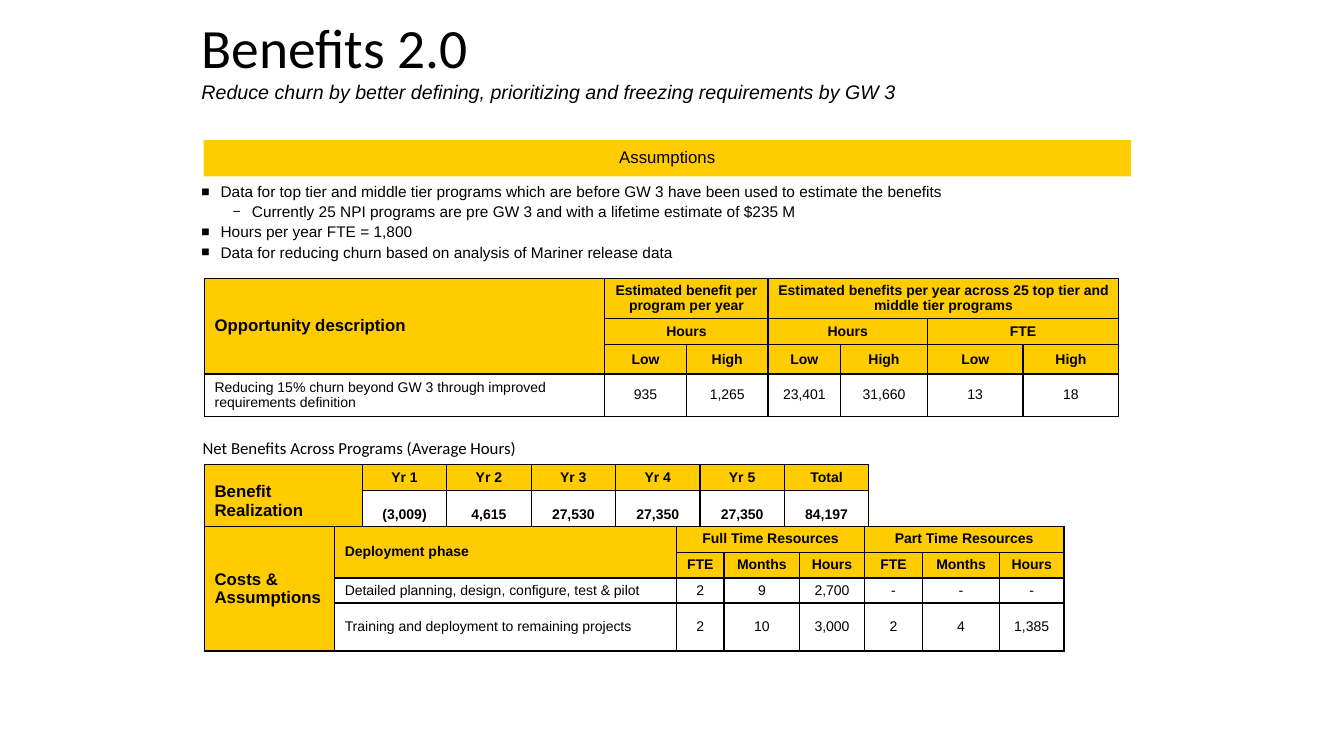
from lxml import etree
from pptx import Presentation, util as u
from pptx.dml.color import RGBColor
from pptx.enum import shapes, text
from pptx.oxml import ns

GOLD = RGBColor(0xFF, 0xCC, 0x00)
BLACK = RGBColor(0, 0, 0)
LEFT, MID = text.PP_ALIGN.LEFT, text.PP_ALIGN.CENTER

deck = Presentation()
deck.slide_width, deck.slide_height = u.Inches(13.33), u.Inches(7.5)
slide = deck.slides.add_slide(deck.slide_layouts[6])


def place(x, y, w, h):
    """Turn percentages of the slide's size into lengths."""
    wide, high = deck.slide_width / 100, deck.slide_height / 100
    return [int(n) for n in (x * wide, y * high, w * wide, h * high)]


def style(frame, size, face="Arial", bold=False, slant=False, align=LEFT):
    frame.vertical_anchor = frame.vertical_anchor or text.MSO_ANCHOR.TOP
    for par in frame.paragraphs:
        par.alignment = align
        for run in par.runs:
            font = run.font
            font.size, font.name = u.Pt(size), face
            font.bold, font.italic = bold, slant
            font.color.rgb = BLACK


# Assumption bullets: level and wording
notes = [
    (0, "Data for top tier and middle tier programs which are before GW 3 have been used to estimate the benefits"),
    (1, "Currently 25 NPI programs are pre GW 3 and with a lifetime estimate of $235 M"),
    (0, "Hours per year FTE = 1,800"),
    (0, "Data for reducing churn based on analysis of Mariner release data"),
]
frame = slide.shapes.add_textbox(*place(13.35, 23.73, 66.68, 11.87)).text_frame
frame.word_wrap = True
frame.text = "\n".join(words for _, words in notes)
style(frame, 11)
for par, (level, _) in zip(frame.paragraphs, notes):
    par.level = level
    par.line_spacing, par.space_before = 0.9, u.Pt(2.5)
    props = par._p.get_or_add_pPr()
    props.set("marL", str(u.Inches(0.31 * (level + 1))))
    props.set("indent", str(u.Inches(-0.19)))
    etree.SubElement(props, ns.qn("a:buSzPct"), val="90000")
    etree.SubElement(props, ns.qn("a:buFont"), typeface="Arial")
    etree.SubElement(props, ns.qn("a:buChar"), char="■−"[level])

# Tables: place, column shares, row shares, header rows, left columns,
# bold figures, merges (row, column, last row, last column), wording
tables = [
    ((15.22, 36.8, 68.03, 18.27), (397, 81, 81, 72, 86, 95, 95), (40, 26, 29, 42), 3, 1, False,
     [(0, 0, 2, 0), (0, 1, 0, 2), (0, 3, 0, 6), (1, 1, 1, 2), (1, 3, 1, 4), (1, 5, 1, 6)],
     [["Opportunity description", "Estimated benefit per program per year", "",
       "Estimated benefits per year across 25 top tier and middle tier programs", "", "", ""],
      ["", "Hours", "", "Hours", "", "FTE", ""],
      ["", "Low", "High", "Low", "High", "Low", "High"],
      ["Reducing 15% churn beyond GW 3 through improved requirements definition",
       "935", "1,265", "23,401", "31,660", "13", "18"]]),
    ((15.22, 61.47, 49.43, 9.73), (157, 84, 84, 84, 84, 84, 84), (26, 48), 1, 1, True,
     [(0, 0, 1, 0)],
     [["Benefit Realization", "Yr 1", "Yr 2", "Yr 3", "Yr 4", "Yr 5", "Total"],
      ["", "(3,009)", "4,615", "27,530", "27,350", "27,350", "84,197"]]),
    ((15.22, 69.6, 63.95, 16.53), (129, 339, 47, 75, 64, 58, 76, 64), (26, 26, 25, 48), 2, 2, False,
     [(0, 0, 3, 0), (0, 1, 1, 1), (0, 2, 0, 4), (0, 5, 0, 7)],
     [["Costs & Assumptions", "Deployment phase", "Full Time Resources", "", "",
       "Part Time Resources", "", ""],
      ["", "", "FTE", "Months", "Hours", "FTE", "Months", "Hours"],
      ["", "Detailed planning, design, configure, test & pilot", "2", "9", "2,700", "-", "-", "-"],
      ["", "Training and deployment to remaining projects", "2", "10", "3,000", "2", "4", "1,385"]]),
]
for spot, cols, rows, heads, lefts, strong, spans, words in tables:
    box = place(*spot)
    grid = slide.shapes.add_table(len(rows), len(cols), *box).table
    grid.horz_banding = grid.first_row = False
    for col, share in zip(grid.columns, cols):
        col.width = int(box[2] * share / sum(cols))
    for row, share in zip(grid.rows, rows):
        row.height = int(box[3] * share / sum(rows))
    for r, line in enumerate(words):
        for c, word in enumerate(line):
            cell = grid.cell(r, c)
            cell.text = word
            cell.vertical_anchor = text.MSO_ANCHOR.MIDDLE
            cell.margin_top = cell.margin_bottom = u.Inches(0.03)
            style(cell.text_frame, 12 if r == c == 0 else 10, bold=strong or r < heads,
                  align=LEFT if c < lefts else MID)
            props = cell._tc.get_or_add_tcPr()
            for side in ("a:lnL", "a:lnR", "a:lnT", "a:lnB"):
                edge = etree.SubElement(props, ns.qn(side), w=str(u.Pt(1)))
                ink = etree.SubElement(edge, ns.qn("a:solidFill"))
                etree.SubElement(ink, ns.qn("a:srgbClr"), val=str(BLACK))
            if r < heads:
                cell.fill.solid()
                cell.fill.fore_color.rgb = GOLD
            else:
                cell.fill.background()
    for top, left, low, right in spans:
        grid.cell(top, left).merge(grid.cell(low, right))

# Single lines: place, wording, size, font, italic, wrap
lines = [
    ((14.33, 57.2, 25.13, 4), "Net Benefits Across Programs (Average Hours)", 12, "Calibri", False, False),
    ((14.25, 9.87, 69.9, 4.4),
     "Reduce churn by better defining, prioritizing and freezing requirements by GW 3", 14, "Arial", True, True),
    ((14.25, 2.27, 58.73, 8.93), "Benefits 2.0", 39.6, "Calibri", False, True),
]
for spot, words, size, face, slant, wrap in lines:
    frame = slide.shapes.add_textbox(*place(*spot)).text_frame
    frame.text, frame.word_wrap = words, wrap
    frame.vertical_anchor = text.MSO_ANCHOR.MIDDLE
    style(frame, size, face, slant=slant)
frame.paragraphs[0].line_spacing = 0.9

bar = slide.shapes.add_shape(shapes.MSO_SHAPE.RECTANGLE, *place(15.15, 18.53, 69, 4.8))
bar.shadow.inherit = False
bar.fill.solid()
bar.fill.fore_color.rgb = GOLD
bar.line.fill.background()
bar.text_frame.text = "Assumptions"
bar.text_frame.vertical_anchor = text.MSO_ANCHOR.MIDDLE
style(bar.text_frame, 12, align=MID)
bar.text_frame.paragraphs[0].line_spacing = 0.9

deck.save("out.pptx")
